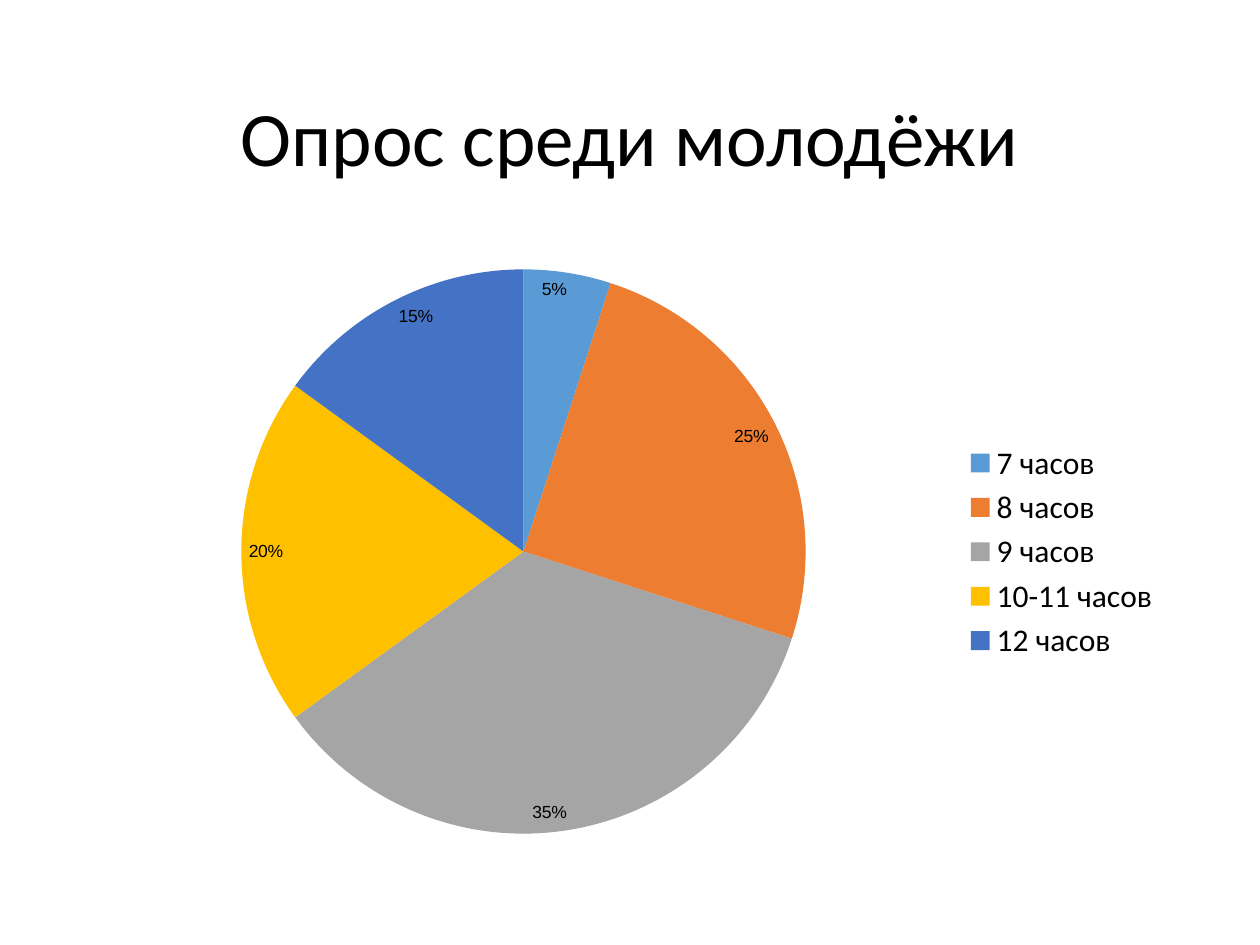
import dataclasses

import pptx
import pptx.chart.data
import pptx.dml.color
import pptx.enum.chart
import pptx.enum.text
import pptx.oxml
import pptx.oxml.ns
import pptx.util
from pptx.util import Inches


@dataclasses.dataclass(frozen=True)
class Theme:
    font: str = "Calibri"
    label_font: str = "Arial"
    ink: str = "000000"
    background: str = "FFFFFF"
    slices: tuple = ("5B9BD5", "ED7D31", "A5A5A5", "FFC000", "4472C4")
    title_size: int = 44
    legend_size: int = 18
    label_size: int = 10


THEME = Theme()
SURVEY = {
    "7 часов": 0.05,
    "8 часов": 0.25,
    "9 часов": 0.35,
    "10-11 часов": 0.2,
    "12 часов": 0.15,
}


def rgb(value):
    return pptx.dml.color.RGBColor.from_string(value)


def style_font(font, name, size):
    font.name = name
    font.size = pptx.util.Pt(size)
    font.color.rgb = rgb(THEME.ink)


def add_title(slide, left, top, width, height):
    frame = slide.shapes.add_textbox(left, top, width, height).text_frame
    frame.word_wrap = True
    frame.vertical_anchor = pptx.enum.text.MSO_ANCHOR.MIDDLE
    heading = frame.paragraphs[0]
    heading.alignment = pptx.enum.text.PP_ALIGN.CENTER
    heading.line_spacing = 0.9
    run = heading.add_run()
    run.text = "Опрос среди молодёжи"
    style_font(run.font, THEME.font, THEME.title_size)


def place_plot(chart, x, y, width, height):
    """Fix the inner plot area, in fractions of the chart's box."""
    plot_area = chart._chartSpace.chart.plotArea
    for old in plot_area.findall(pptx.oxml.ns.qn("c:layout")):
        plot_area.remove(old)
    layout = pptx.oxml.parse_xml(
        f'<c:layout {pptx.oxml.ns.nsdecls("c")}><c:manualLayout>'
        '<c:layoutTarget val="inner"/><c:xMode val="edge"/><c:yMode val="edge"/>'
        f'<c:x val="{x}"/><c:y val="{y}"/><c:w val="{width}"/><c:h val="{height}"/>'
        "</c:manualLayout></c:layout>"
    )
    plot_area.insert(0, layout)


def add_survey_pie(slide, left, top, width, height):
    survey = pptx.chart.data.CategoryChartData(number_format="0%")
    survey.categories = list(SURVEY)
    survey.add_series("Series 1", list(SURVEY.values()))
    chart = slide.shapes.add_chart(
        pptx.enum.chart.XL_CHART_TYPE.PIE, left, top, width, height, survey
    ).chart
    chart.has_title = False
    style_font(chart.font, THEME.font, THEME.legend_size)

    chart.has_legend = True
    chart.legend.position = pptx.enum.chart.XL_LEGEND_POSITION.RIGHT
    chart.legend.include_in_layout = False
    style_font(chart.legend.font, THEME.font, THEME.legend_size)

    pie = chart.plots[0]
    pie.vary_by_categories = True
    answers = pie.series[0]
    for index, color in enumerate(THEME.slices):
        fill = answers.points[index].format.fill
        fill.solid()
        fill.fore_color.rgb = rgb(color)

    labels = answers.data_labels
    labels.show_value = True
    labels.number_format = "0%"
    labels.number_format_is_linked = False
    labels.position = pptx.enum.chart.XL_LABEL_POSITION.INSIDE_END
    style_font(labels.font, THEME.label_font, THEME.label_size)

    diameter = Inches(4.48)
    place_plot(
        chart,
        x=round(Inches(1.22) / width, 3),
        y=round((height - diameter) / 2 / height, 3),
        width=round(diameter / width, 3),
        height=round(diameter / height, 3),
    )


def main():
    presentation = pptx.Presentation()
    presentation.slide_width = Inches(10)
    presentation.slide_height = Inches(7.5)
    slide = presentation.slides.add_slide(presentation.slide_layouts[6])
    slide.background.fill.solid()
    slide.background.fill.fore_color.rgb = rgb(THEME.background)

    left, width = Inches(0.69), Inches(8.62)
    add_title(slide, left, Inches(0.4), width, Inches(1.45))
    add_survey_pie(slide, left, Inches(2), width, Inches(4.76))
    presentation.save("out.pptx")


if __name__ == "__main__":
    main()
